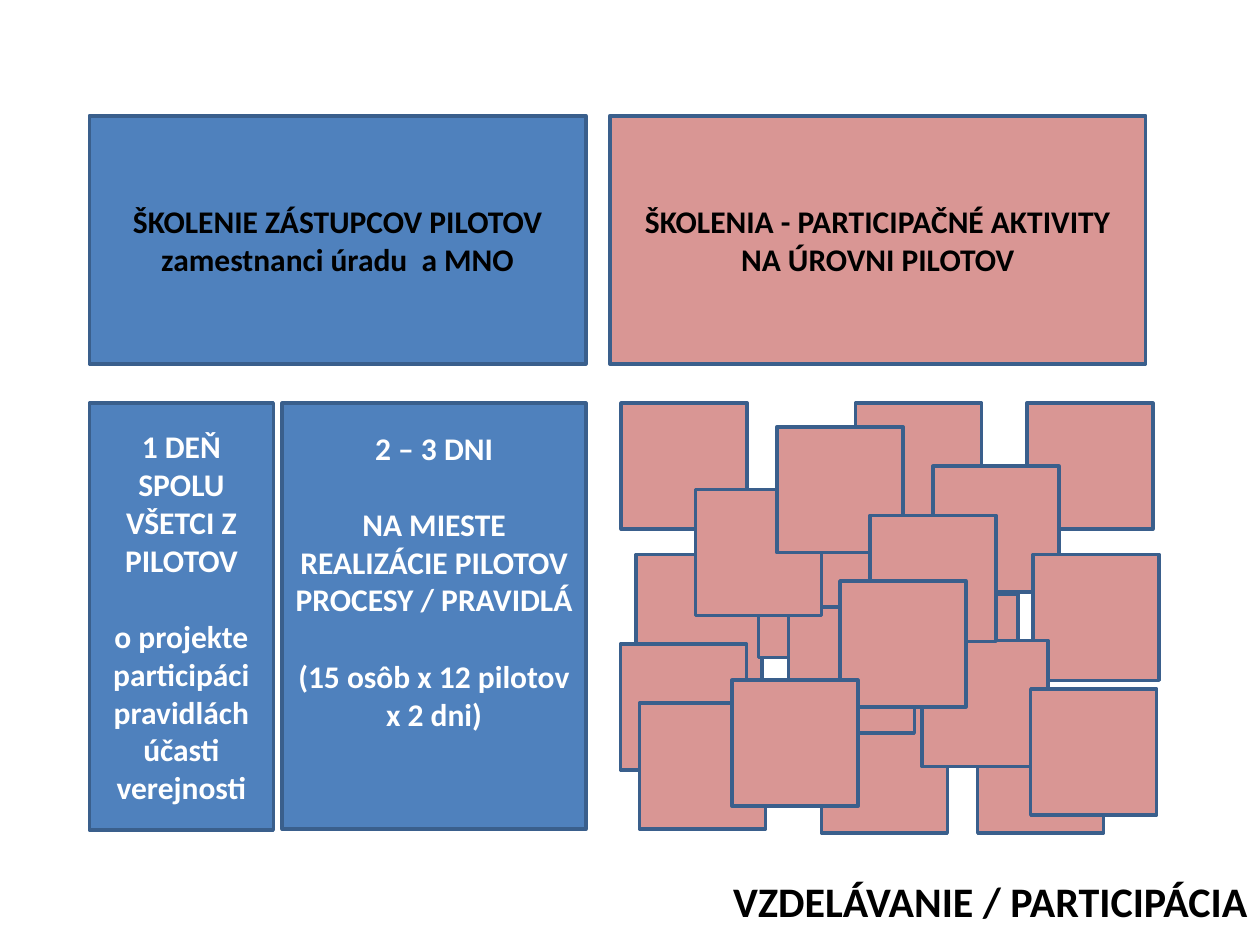
from dataclasses import dataclass

from pptx import Presentation
from pptx.dml.color import RGBColor
from pptx.enum import shapes, text
from pptx.util import Pt

BLUE = RGBColor(0x4F, 0x81, 0xBD)
PINK = RGBColor(0xD9, 0x96, 0x94)
OUTLINE = RGBColor(0x3A, 0x5F, 0x8C)
BLACK = RGBColor(0, 0, 0)
WHITE = RGBColor(255, 255, 255)

FONT = "Calibri"
BODY_SIZE = 18
BLOCK_GAP = 22
TOP_ROW, TOP_HEIGHT = 66.2, 141.8
BOTTOM_ROW = 230.4
LEFT_COLUMN = 51.1
SQUARE_SIZE = 72


@dataclass(frozen=True)
class Line:
    words: str
    space_before: float = 0


@dataclass(frozen=True)
class Box:
    left: float
    top: float
    width: float
    height: float
    fill: RGBColor
    outlined: bool = True
    lines: tuple[Line, ...] = ()
    color: RGBColor = BLACK
    size: float = BODY_SIZE
    align: text.PP_ALIGN = text.PP_ALIGN.CENTER
    anchor: text.MSO_ANCHOR = text.MSO_ANCHOR.MIDDLE
    margin_top: float = 3.6


FOOTER = Box(0, 474.5, 720, 58.3, WHITE, outlined=False,
             lines=(Line("VZDELÁVANIE / PARTICIPÁCIA"),), size=24,
             align=text.PP_ALIGN.RIGHT, anchor=text.MSO_ANCHOR.TOP,
             margin_top=25.6)

PANELS = (
    Box(LEFT_COLUMN, TOP_ROW, 283.7, TOP_HEIGHT, BLUE, lines=(
        Line("ŠKOLENIE ZÁSTUPCOV PILOTOV"),
        Line("zamestnanci úradu  a MNO"))),
    Box(LEFT_COLUMN, BOTTOM_ROW, 105.1, 244, BLUE, color=WHITE, lines=(
        Line("1 DEŇ"),
        Line("SPOLU VŠETCI Z PILOTOV"),
        Line("o projekte participáci pravidlách účasti verejnosti", BLOCK_GAP))),
    Box(161.3, BOTTOM_ROW, 173.5, 243.4, BLUE, color=WHITE, lines=(
        Line("2 – 3 DNI"),
        Line("NA MIESTE REALIZÁCIE PILOTOV", BLOCK_GAP),
        Line("PROCESY / PRAVIDLÁ"),
        Line("(15 osôb x 12 pilotov x 2 dni)", BLOCK_GAP)),
        anchor=text.MSO_ANCHOR.TOP, margin_top=14.5),
    Box(348.5, TOP_ROW, 306.2, TOP_HEIGHT, PINK, lines=(
        Line("ŠKOLENIA - PARTICIPAČNÉ AKTIVITY NA ÚROVNI PILOTOV"),)),
)

# Left and top of each activity square, from back to front
SQUARES = (
    (488.9, 230.4), (586.8, 230.4), (355, 230.4), (363.6, 316.8),
    (433.4, 303.8), (533.2, 266.4), (509.8, 339.8), (590.4, 316.8),
    (354.6, 367.9), (469.4, 403.9), (450.5, 347), (558.7, 403.9),
    (397.4, 279.8), (444, 243.9), (527, 366), (497.2, 294.5),
    (480, 332), (589, 393.8), (365.5, 401.8), (418.3, 388.7),
)


def draw_box(slide, box: Box) -> None:
    shape = slide.shapes.add_shape(
        shapes.MSO_SHAPE.RECTANGLE,
        Pt(box.left), Pt(box.top), Pt(box.width), Pt(box.height))
    shape.shadow.inherit = False
    shape.fill.solid()
    shape.fill.fore_color.rgb = box.fill
    if box.outlined:
        shape.line.color.rgb = OUTLINE
        shape.line.width = Pt(2)
    else:
        shape.line.fill.background()
    if box.lines:
        write_lines(shape.text_frame, box)


def write_lines(frame, box: Box) -> None:
    frame.word_wrap = True
    frame.vertical_anchor = box.anchor
    frame.margin_top = Pt(box.margin_top)
    for index, line in enumerate(box.lines):
        paragraph = frame.add_paragraph() if index else frame.paragraphs[0]
        paragraph.text = line.words
        paragraph.alignment = box.align
        if line.space_before:
            paragraph.space_before = Pt(line.space_before)
        paragraph.font.name = FONT
        paragraph.font.size = Pt(box.size)
        paragraph.font.bold = True
        paragraph.font.color.rgb = box.color


def main() -> None:
    presentation = Presentation()
    presentation.slide_width = Pt(720)
    presentation.slide_height = Pt(540)
    slide = presentation.slides.add_slide(presentation.slide_layouts[6])
    draw_box(slide, FOOTER)
    for panel in PANELS:
        draw_box(slide, panel)
    for left, top in SQUARES:
        draw_box(slide, Box(left, top, SQUARE_SIZE, SQUARE_SIZE, PINK))
    presentation.save("out.pptx")


if __name__ == "__main__":
    main()
